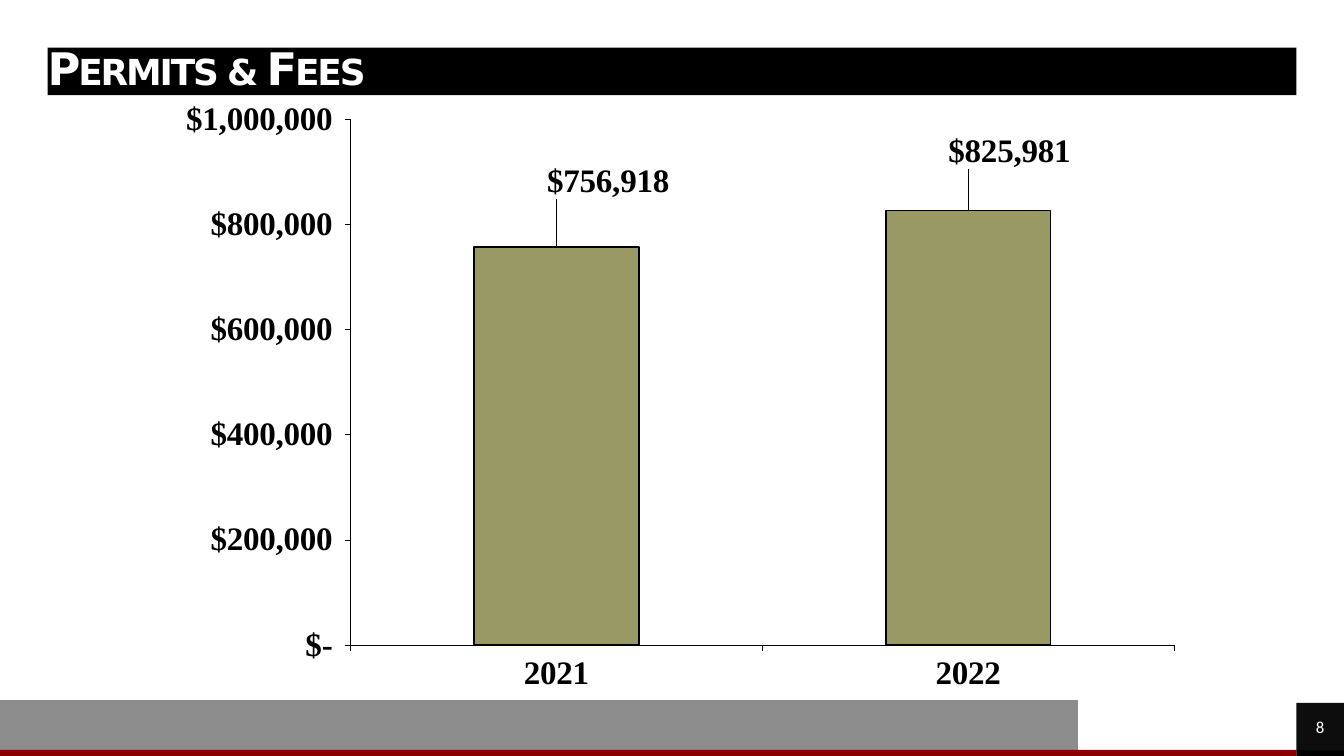
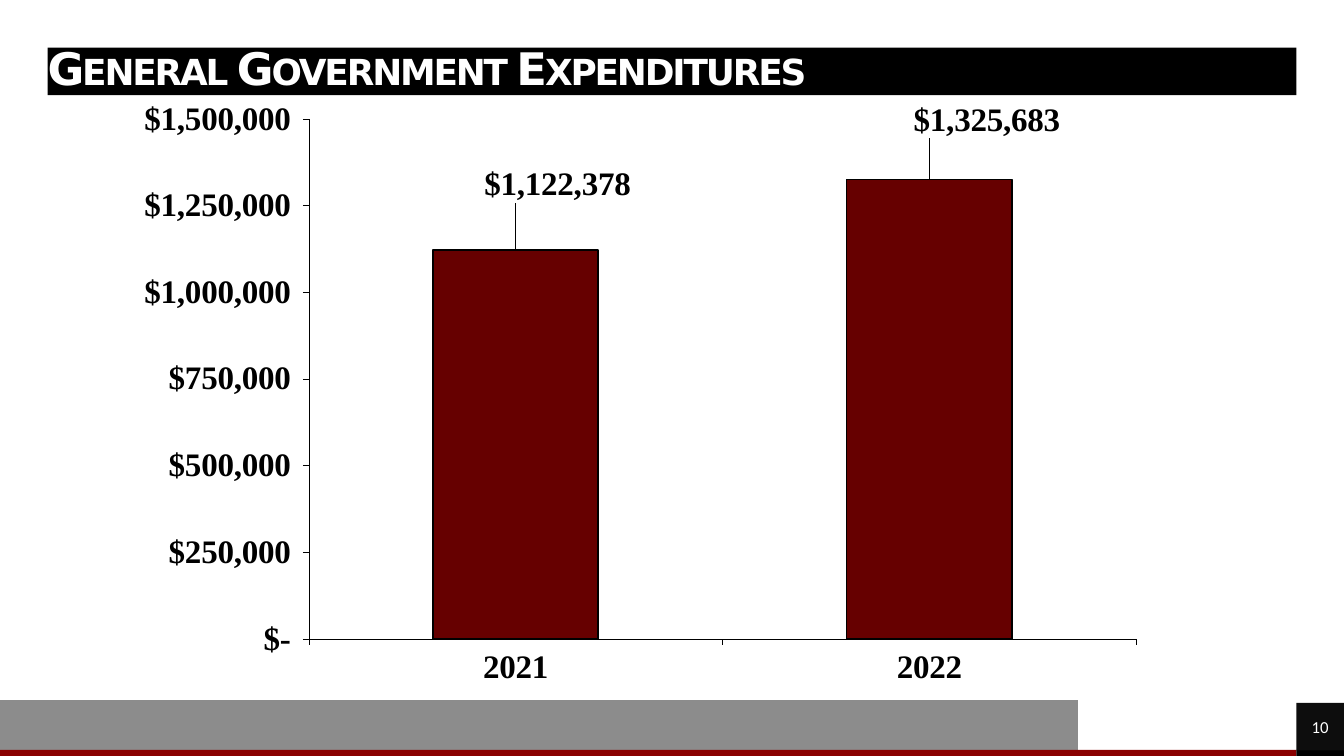
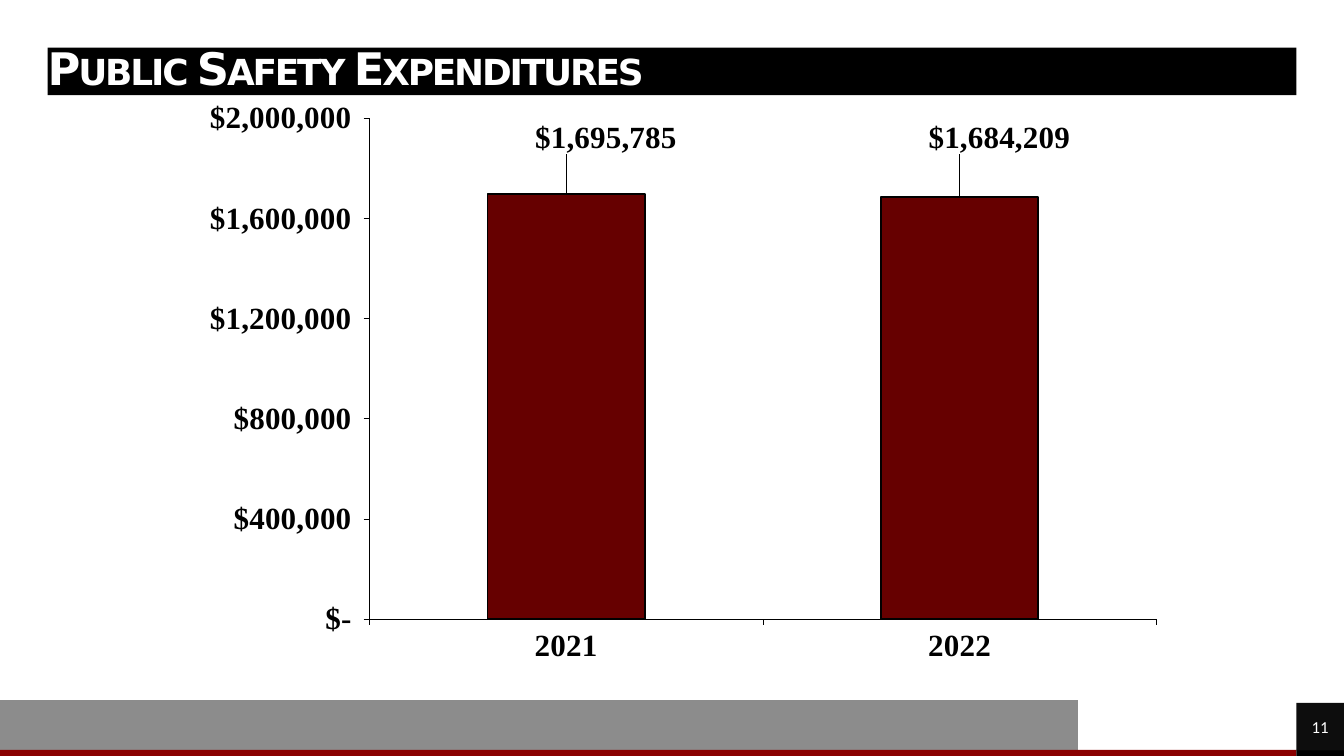
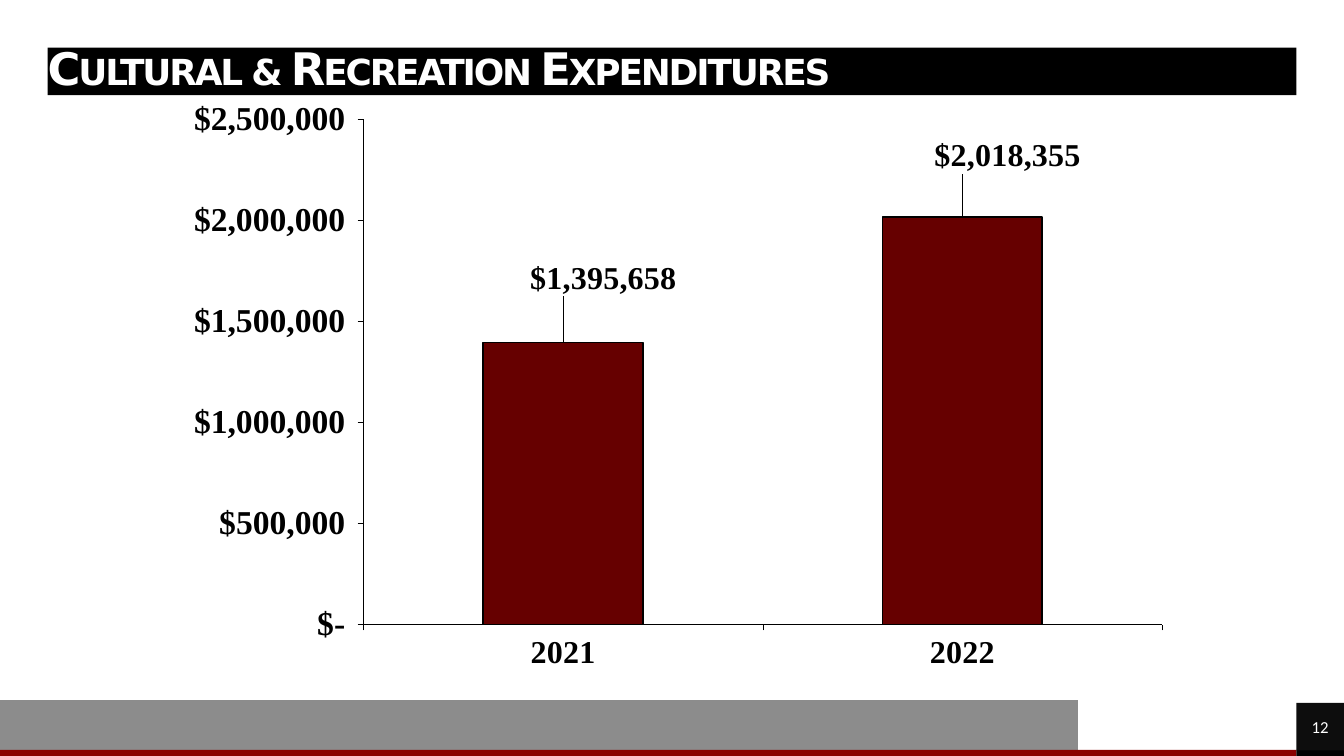
from dataclasses import dataclass

from lxml import etree
from pptx import Presentation
from pptx.chart import data as cd
from pptx.dml import color
from pptx.enum import chart as ce, shapes, text
from pptx.oxml import ns
from pptx.util import Pt


@dataclass(frozen=True)
class Theme:
    black: str = "000000"
    white: str = "FFFFFF"
    red: str = "8A0000"
    grey: str = "8C8C8C"
    number_fill: str = "0D0D0D"
    revenue: str = "999966"
    spending: str = "660000"
    title_font: str = "DejaVu Sans"
    number_font: str = "Calibri"
    chart_font: str = "Times New Roman"
    title_size: float = 32
    number_size: float = 12


T = Theme()
MONEY = r'_("$"* #,##0_);_("$"* \(#,##0\);_("$"* "-"_);_(@_)'
YEARS = ("2021", "2022")
WIDTH, HEIGHT = 960, 540
TITLE_BOX = (34, 34, 892, 34)
NUMBER_BOX = (926, 502, 34, 34)
BANDS = (
    ((770, 535.7, 156, 4.3), T.red),
    ((0, 500, 770, 35.7), T.grey),
    ((0, 535.7, 770, 4.3), T.red),
    ((926, 535.7, 34, 4.3), T.black),
)

SLIDES = (
    dict(title="Permits & Fees", number=8, box=(111, 72, 738, 447),
         fill=T.revenue, values=(756918, 825981), top=1000000, step=200000,
         size=23.6, axis_size=23.6, line=1.3, plot=(0.189, 0.022, 0.797, 0.847),
         shifts=((0.05, -0.07), (0.04, -0.06))),
    dict(title="General Government Expenditures", number=10, box=(74, 72, 748, 442),
         fill=T.spending, values=(1122378, 1325683), top=1500000, step=250000,
         size=23.6, axis_size=23.6, line=1.3, plot=(0.196, 0.022, 0.79, 0.847),
         shifts=((0.04, -0.07), (0.055, -0.06))),
    dict(title="Public Safety Expenditures", number=11, box=(124.5, 72, 711.5, 425.5),
         fill=T.spending, values=(1695785, 1684209), top=2000000, step=400000,
         size=22.2, axis_size=22.2, line=1.25, plot=(0.196, 0.022, 0.79, 0.847),
         shifts=((0.04, -0.06), (0.04, -0.065))),
    dict(title="Cultural & Recreation Expenditures", number=12, box=(121, 72, 718.5, 430),
         fill=T.spending, values=(1395658, 2018355), top=2500000, step=500000,
         size=22.9, axis_size=24, line=1.25, plot=(0.193, 0.022, 0.794, 0.847),
         shifts=((0.04, -0.07), (0.045, -0.065))),
)


def rgb(value):
    return color.RGBColor.from_string(value)


def assign(obj, **values):
    for name, value in values.items():
        setattr(obj, name, value)


def style_font(font, name, size, shade, bold=False):
    assign(font, name=name, size=Pt(size), bold=bold)
    font.color.rgb = rgb(shade)


def style_line(line, width):
    line.color.rgb = rgb(T.black)
    line.width = Pt(width)


def add_box(s, box, fill):
    sp = s.shapes.add_shape(shapes.MSO_SHAPE.RECTANGLE, *map(Pt, box))
    sp.shadow.inherit = False
    sp.fill.solid()
    sp.fill.fore_color.rgb = rgb(fill)
    sp.line.fill.background()
    return sp


def add_text(sp, words, align, **font):
    tf = sp.text_frame
    assign(tf, margin_left=0, margin_top=0, margin_right=0, margin_bottom=0,
           word_wrap=True, vertical_anchor=text.MSO_ANCHOR.MIDDLE)
    p = tf.paragraphs[0]
    p.alignment = align
    r = p.add_run()
    r.text = words
    style_font(r.font, shade=T.white, **font)
    return p, r


def add_title(s, box, words):
    p, r = add_text(add_box(s, box, T.black), words, text.PP_ALIGN.LEFT,
                    name=T.title_font, size=T.title_size, bold=True)
    p.line_spacing = 0.9
    props = r._r.get_or_add_rPr()
    props.set("spc", "-150")
    props.set("cap", "small")


def add_number(s, box, number):
    add_text(add_box(s, box, T.number_fill), str(number), text.PP_ALIGN.CENTER,
             name=T.number_font, size=T.number_size)


def add_frame(s, title, number):
    for box, fill in BANDS:
        add_box(s, box, fill)
    add_title(s, TITLE_BOX, title)
    add_number(s, NUMBER_BOX, number)


def make_layout(**values):
    layout = etree.Element(ns.qn("c:layout"))
    manual = etree.SubElement(layout, ns.qn("c:manualLayout"))
    for name, value in values.items():
        etree.SubElement(manual, ns.qn(f"c:{name}")).set("val", str(value))
    return layout


def place_plot(chart, plot):
    area = chart._chartSpace.find(".//" + ns.qn("c:plotArea"))
    for old in area.findall(ns.qn("c:layout")):
        area.remove(old)
    x, y, w, h = plot
    area.insert(0, make_layout(layoutTarget="inner", xMode="edge", yMode="edge",
                               x=x, y=y, w=w, h=h))


def add_labels(series, shifts, font):
    labels = series.data_labels
    assign(labels, show_value=True, number_format=MONEY, number_format_is_linked=False,
           position=ce.XL_LABEL_POSITION.OUTSIDE_END)
    style_font(labels.font, **font)
    for i, (x, y) in enumerate(shifts):
        label = series.points[i].data_label
        label.position = ce.XL_LABEL_POSITION.OUTSIDE_END
        style_font(label.font, **font)
    for item, (x, y) in zip(labels._element.findall(ns.qn("c:dLbl")), shifts):
        item.insert(1, make_layout(x=x, y=y))
        fmt = etree.Element(ns.qn("c:numFmt"), formatCode=MONEY, sourceLinked="0")
        item.insert(2, fmt)


def add_column_chart(s, box, fill, values, top, step, size, axis_size, line, plot, shifts):
    data = cd.CategoryChartData()
    data.categories = YEARS
    data.add_series("Series 1", values)
    chart = s.shapes.add_chart(ce.XL_CHART_TYPE.COLUMN_CLUSTERED,
                               *map(Pt, box), data).chart
    assign(chart, has_title=False, has_legend=False)
    font = dict(name=T.chart_font, size=size, shade=T.black, bold=True)
    style_font(chart.font, **font)
    place_plot(chart, plot)
    assign(chart.plots[0], gap_width=150, vary_by_categories=False)

    for axis, points in ((chart.category_axis, size), (chart.value_axis, axis_size)):
        assign(axis, has_major_gridlines=False, has_title=False,
               major_tick_mark=ce.XL_TICK_MARK.OUTSIDE,
               minor_tick_mark=ce.XL_TICK_MARK.NONE)
        style_font(axis.tick_labels.font, **{**font, "size": points})
        style_line(axis.format.line, 0.32)
    chart.category_axis.tick_label_position = ce.XL_TICK_LABEL_POSITION.LOW
    assign(chart.value_axis, minimum_scale=0, maximum_scale=top, major_unit=step)
    assign(chart.value_axis.tick_labels, number_format=MONEY, number_format_is_linked=False)

    series = chart.plots[0].series[0]
    series.invert_if_negative = False
    series.format.fill.solid()
    series.format.fill.fore_color.rgb = rgb(fill)
    style_line(series.format.line, line)
    add_labels(series, shifts, font)


def add_chart_slide(prs, title, number, **chart):
    s = prs.slides.add_slide(prs.slide_layouts[6])
    add_frame(s, title, number)
    add_column_chart(s, **chart)


def main():
    prs = Presentation()
    assign(prs, slide_width=Pt(WIDTH), slide_height=Pt(HEIGHT))
    for slide in SLIDES:
        add_chart_slide(prs, **slide)
    prs.save("out.pptx")


if __name__ == "__main__":
    main()
